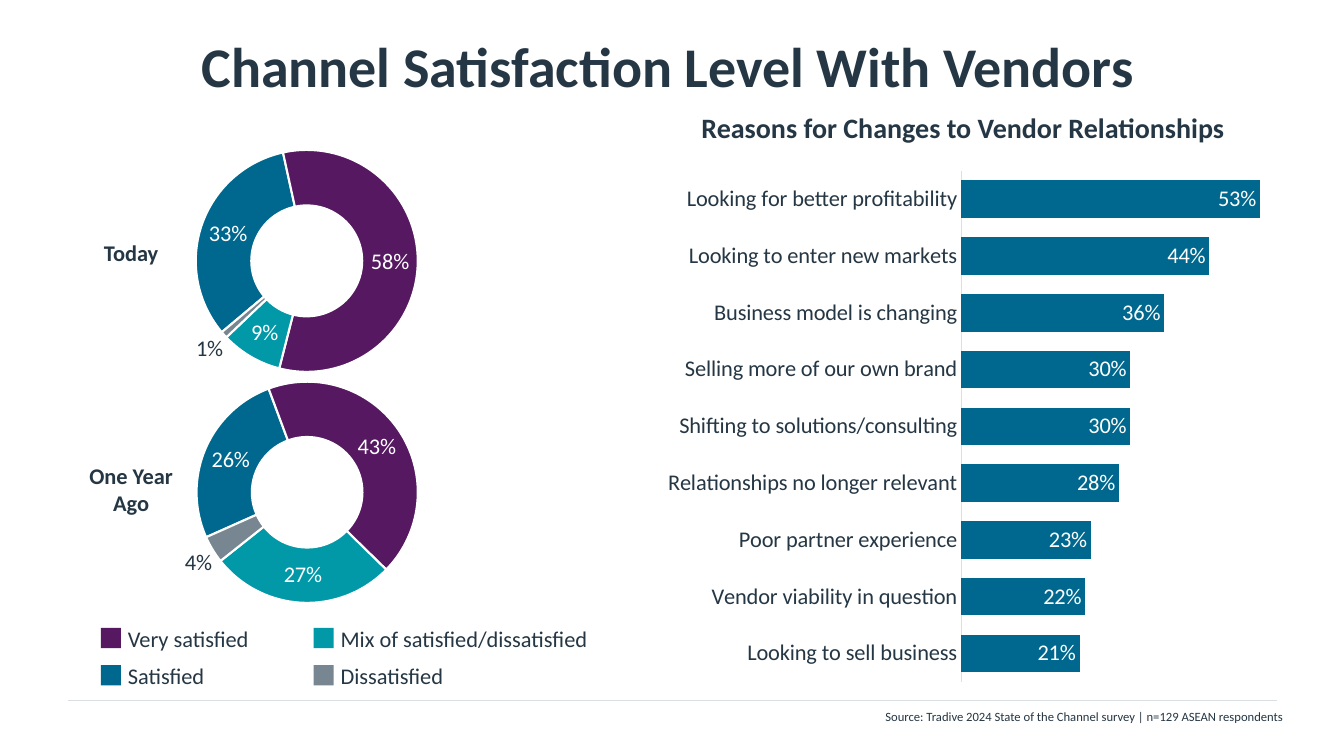
from lxml.etree import SubElement
from pptx import Presentation
from pptx.chart.data import CategoryChartData
from pptx.dml.color import RGBColor
from pptx.enum.chart import XL_CHART_TYPE, XL_LABEL_POSITION, XL_TICK_LABEL_POSITION, XL_TICK_MARK
from pptx.enum.shapes import MSO_CONNECTOR, MSO_SHAPE
from pptx.enum.text import MSO_ANCHOR, PP_ALIGN
from pptx.oxml import parse_xml
from pptx.oxml.ns import nsdecls, qn
from pptx.util import Pt

TITLE = "Channel Satisfaction Level With Vendors"
SUBTITLE = "Reasons for Changes to Vendor Relationships"
SOURCE = "Source: Tradive 2024 State of the Channel survey | n=129 ASEAN respondents"

# Values run: satisfied, very satisfied, mix, dissatisfied.
# The outside offset moves the last label off the ring, as shares of the chart.
RINGS = [
    {"label": "Today", "top": 139, "label_top": 231, "values": (0.33, 0.58, 0.09, 0.01),
     "start": 230, "plot": (0.086, 0.039, 0.823, 0.881), "outside": (-0.13, 0.13)},
    {"label": "One Year Ago", "top": 370, "label_top": 465, "values": (0.26, 0.43, 0.27, 0.04),
     "start": 246, "plot": (0.089, 0.035, 0.82, 0.878), "outside": (-0.14, 0.11)},
]
RING_COLORS = ("satisfied", "very", "mix", "dissatisfied")
LEGEND = [
    [("Very satisfied", "very", 142), ("Mix of satisfied/dissatisfied", "mix", 268)],
    [("Satisfied", "satisfied", 97), ("Dissatisfied", "dissatisfied", 123)],
]
REASONS = [
    ("Looking for better profitability", 0.53),
    ("Looking to enter new markets", 0.44),
    ("Business model is changing", 0.36),
    ("Selling more of our own brand", 0.30),
    ("Shifting to solutions/consulting", 0.30),
    ("Relationships no longer relevant", 0.28),
    ("Poor partner experience", 0.23),
    ("Vendor viability in question", 0.22),
    ("Looking to sell business", 0.21),
]

THEME = {
    "font": "Calibri",
    "colors": {"paper": "FEFFFE", "ink": "253644", "rule": "DADFE1", "axis": "D8E1EA",
               "very": "561861", "satisfied": "00688E", "mix": "0198A7",
               "dissatisfied": "778691"},
    "sizes": {"title": 40, "subtitle": 20, "body": 16, "source": 9},
}
EMU_PER_PX = 9144  # 100 px to the inch


def px(*lengths):
    return [length * EMU_PER_PX for length in lengths]


def color(name):
    return RGBColor.from_string(THEME["colors"][name])


def style_font(font, size="body", ink="ink", bold=False):
    font.name = THEME["font"]
    font.size = Pt(THEME["sizes"][size])
    font.color.rgb = color(ink)
    font.bold = bold


def paint(fill, name):
    fill.solid()
    fill.fore_color.rgb = color(name)


def add_text(slide, text, box, size="body", bold=False, align=PP_ALIGN.LEFT,
             anchor=MSO_ANCHOR.TOP, insets=(10, 5, 10, 5), wrap=True):
    frame = slide.shapes.add_textbox(*px(*box)).text_frame
    frame.word_wrap = wrap
    frame.vertical_anchor = anchor
    (frame.margin_left, frame.margin_top,
     frame.margin_right, frame.margin_bottom) = px(*insets)
    paragraph = frame.paragraphs[0]
    paragraph.alignment = align
    run = paragraph.add_run()
    run.text = text
    style_font(run.font, size, bold=bold)


def add_heading(slide, text, box, size="body"):
    add_text(slide, text, box, size, True, PP_ALIGN.CENTER, MSO_ANCHOR.MIDDLE, (0, 5, 10, 5))


def layout_element(values, inner=False):
    layout = parse_xml(f"<c:layout {nsdecls('c')}><c:manualLayout/></c:layout>")
    settings = list(zip("xywh", values))
    if inner:
        settings = [("layoutTarget", "inner"), ("xMode", "edge"), ("yMode", "edge")] + settings
    for tag, value in settings:
        SubElement(layout[0], qn(f"c:{tag}")).set("val", str(value))
    return layout


def add_chart(slide, kind, box, categories, values, plot_box):
    data = CategoryChartData(number_format="0%")
    data.categories = categories
    data.add_series("Series 1", values)
    chart = slide.shapes.add_chart(kind, *px(*box), data).chart
    chart.has_legend = False
    chart.has_title = False
    style_font(chart.font)
    plot_area = chart.plots[0]._element.getparent()
    for layout in plot_area.findall(qn("c:layout")):
        plot_area.remove(layout)
    plot_area.insert(0, layout_element(plot_box, inner=True))
    chart.plots[0].vary_by_categories = False
    series = chart.plots[0].series[0]
    labels = series.data_labels
    labels.show_value = True
    labels.number_format = "0%"
    labels.number_format_is_linked = False
    style_font(labels.font, ink="paper")
    return chart, series


def add_ring(slide, ring):
    chart, series = add_chart(slide, XL_CHART_TYPE.DOUGHNUT, (171, ring["top"], 268, 250),
                              ("1", "2", "3", "4"), ring["values"], ring["plot"])
    plot = chart.plots[0]._element
    for tag, value in (("firstSliceAng", ring["start"]), ("holeSize", 50)):
        plot.find(qn(f"c:{tag}")).set("val", str(value))
    for index, name in enumerate(RING_COLORS):
        point_format = series.points[index].format
        paint(point_format.fill, name)
        point_format.line.color.rgb = color("paper")
        point_format.line.width = Pt(1.5)
    last = len(RING_COLORS) - 1
    style_font(series.points[last].data_label.font)
    label = series.data_labels._element.find(qn("c:dLbl"))
    label.insert(1, layout_element(ring["outside"]))
    add_heading(slide, ring["label"], (88, ring["label_top"], 94, 40))


def add_reasons(slide):
    names, values = zip(*reversed(REASONS))
    chart, series = add_chart(slide, XL_CHART_TYPE.BAR_CLUSTERED, (573, 169, 693, 508),
                              names, values, (0.549, 0, 0.444, 1))
    chart.plots[0].gap_width = 51
    paint(series.format.fill, "satisfied")
    series.data_labels.position = XL_LABEL_POSITION.INSIDE_END
    value_axis = chart.value_axis
    value_axis.minimum_scale, value_axis.maximum_scale = 0, 0.55
    value_axis.has_major_gridlines = False
    value_axis.visible = False
    category_axis = chart.category_axis
    category_axis.major_tick_mark = XL_TICK_MARK.NONE
    category_axis.minor_tick_mark = XL_TICK_MARK.NONE
    category_axis.tick_label_position = XL_TICK_LABEL_POSITION.NEXT_TO_AXIS
    category_axis.format.line.color.rgb = color("axis")
    category_axis.format.line.width = Pt(0.75)
    style_font(category_axis.tick_labels.font)


def add_legend(slide):
    for row, entries in enumerate(LEGEND):
        for column, (text, name, width) in enumerate(entries):
            left, top = 100 + 211 * column, 623 + 37 * row
            swatch = slide.shapes.add_shape(MSO_SHAPE.RECTANGLE, *px(left, top, 20, 20))
            swatch.shadow.inherit = False
            paint(swatch.fill, name)
            swatch.line.fill.background()
            add_text(slide, text, (left + 17, top - 8, width, 37), wrap=False)


def add_rule(slide):
    rule = slide.shapes.add_connector(MSO_CONNECTOR.STRAIGHT, *px(67, 695, 1267, 695))
    rule.line.color.rgb = color("rule")
    rule.line.width = Pt(0.5)
    SubElement(rule._element.spPr, qn("a:effectLst"))


def main():
    presentation = Presentation()
    presentation.slide_width, presentation.slide_height = px(1333, 750)
    slide = presentation.slides.add_slide(presentation.slide_layouts[6])
    paint(slide.background.fill, "paper")
    add_rule(slide)
    add_heading(slide, TITLE, (67, 2, 1200, 125), "title")
    for ring in RINGS:
        add_ring(slide, ring)
    add_legend(slide)
    add_reasons(slide)
    add_heading(slide, SUBTITLE, (653, 106, 614, 40), "subtitle")
    add_text(slide, SOURCE, (633, 698, 649, 25), "source", align=PP_ALIGN.RIGHT)
    presentation.save("out.pptx")


if __name__ == "__main__":
    main()
